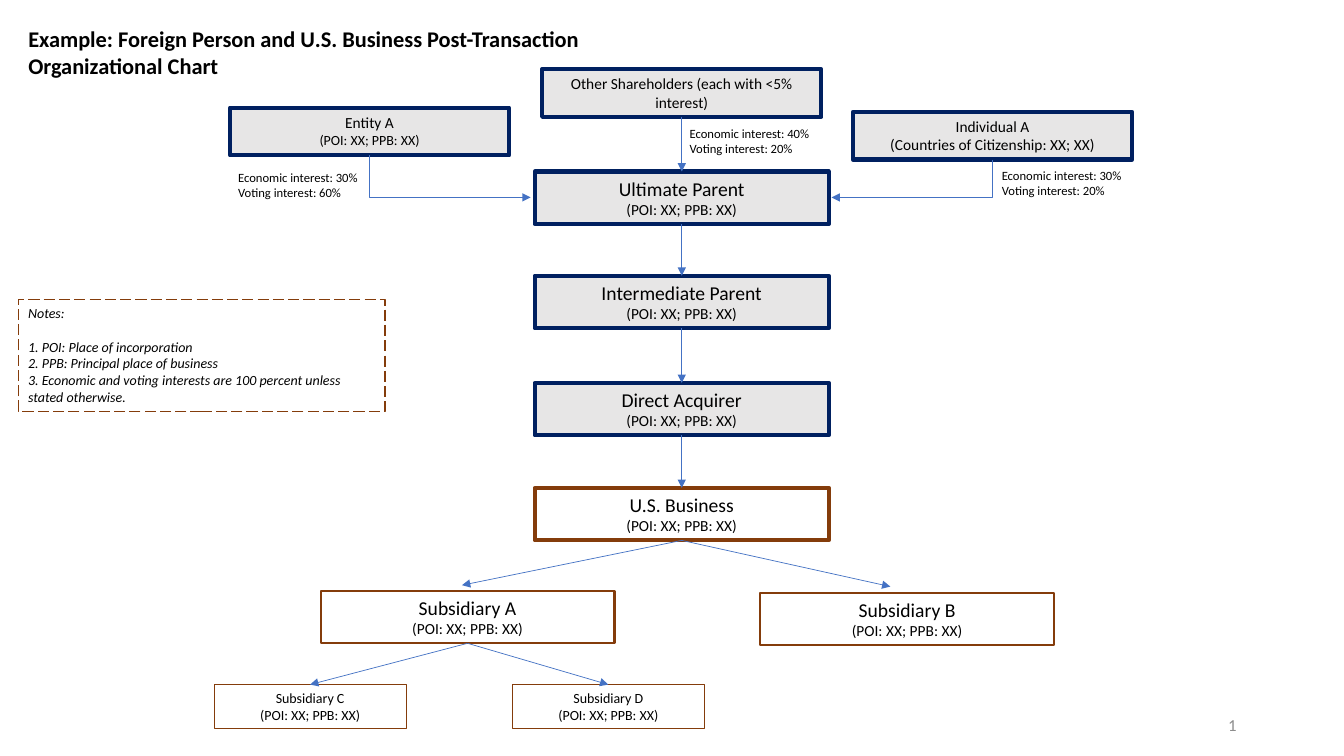
import dataclasses

import pptx
import pptx.dml.color
import pptx.enum.dml
import pptx.enum.shapes
import pptx.enum.text
import pptx.oxml
import pptx.oxml.ns
import pptx.util

Pt = pptx.util.Pt
ALIGN = pptx.enum.text.PP_ALIGN
ANCHOR = pptx.enum.text.MSO_ANCHOR
CONNECTOR = pptx.enum.shapes.MSO_CONNECTOR
qn = pptx.oxml.ns.qn
BOTTOM, TOP = 2, 0


@dataclasses.dataclass(frozen=True)
class Theme:
    font: str = "Calibri"
    text: str = "000000"
    muted: str = "8C8C8C"
    arrow: str = "4472C4"
    foreign_fill: str = "E7E6E6"
    foreign_line: str = "002060"
    domestic_fill: str = "FFFFFF"
    domestic_line: str = "843C0B"
    title: float = 16
    entity: float = 14
    number: float = 12
    detail: float = 11
    small: float = 10
    label: float = 9


def rgb(value):
    return pptx.dml.color.RGBColor.from_string(value)


def add_xml(parent, tag):
    element = parent.makeelement(qn(tag), {})
    parent.append(element)
    return element


class OrganizationChart:
    def __init__(self, slide, theme):
        self.slide = slide
        self.theme = theme

    def set_text(self, shape, lines, align=ALIGN.LEFT, anchor=ANCHOR.TOP, color=None):
        """Fill a shape with (text, size) lines, one paragraph each."""
        frame = shape.text_frame
        frame.word_wrap = True
        frame.auto_size = pptx.enum.text.MSO_AUTO_SIZE.NONE
        frame.vertical_anchor = anchor
        frame.margin_left = frame.margin_right = Pt(7.2)
        frame.margin_top = frame.margin_bottom = Pt(3.6)
        for index, (text, size) in enumerate(lines):
            paragraph = frame.paragraphs[0] if index == 0 else frame.add_paragraph()
            paragraph.text = text
            paragraph.alignment = align
            paragraph.font.name = self.theme.font
            paragraph.font.size = Pt(size)
            paragraph.font.color.rgb = rgb(color or self.theme.text)
        return frame.paragraphs

    def title(self, text, left, top, width, height):
        title = self.slide.shapes.title
        title.left, title.top, title.width, title.height = map(Pt, (left, top, width, height))
        self.set_text(title, [(text, self.theme.title)])[0].font.bold = True

    def box(self, left, top, width, height, line, weight, fill=None):
        shape = self.slide.shapes.add_shape(
            pptx.enum.shapes.MSO_SHAPE.RECTANGLE, *map(Pt, (left, top, width, height)))
        shape.shadow.inherit = False
        if fill:
            shape.fill.solid()
            shape.fill.fore_color.rgb = rgb(fill)
        else:
            shape.fill.background()
        shape.line.color.rgb = rgb(line)
        shape.line.width = Pt(weight)
        return shape

    def entity(self, center, top, size, lines, domestic=False, weight=3.0):
        """Draw an entity box centred on a given x position."""
        theme = self.theme
        width, height = size
        fill = theme.domestic_fill if domestic else theme.foreign_fill
        line = theme.domestic_line if domestic else theme.foreign_line
        shape = self.box(center - width / 2, top, width, height, line, weight, fill)
        self.set_text(shape, lines, ALIGN.CENTER)
        return shape

    def notes(self, left, top, width, height, heading, items):
        shape = self.box(left, top, width, height, self.theme.domestic_line, 1)
        shape.line.dash_style = pptx.enum.dml.MSO_LINE.LONG_DASH
        paragraphs = self.set_text(shape, [(text, self.theme.small) for text in [heading, *items]])
        for paragraph in paragraphs:
            paragraph.font.italic = True
        paragraphs[0].space_after = Pt(12)

    def interest(self, left, top, economic, voting):
        label = self.slide.shapes.add_textbox(*map(Pt, (left, top, 130, 29)))
        self.set_text(label, [(f"Economic interest: {economic}%", self.theme.label),
                              (f"Voting interest: {voting}%", self.theme.label)])

    def slide_number(self, left, top, width, height):
        box = self.slide.shapes.add_textbox(*map(Pt, (left, top, width, height)))
        self.set_text(box, [("1", self.theme.number)], ALIGN.RIGHT,
                      ANCHOR.MIDDLE, self.theme.muted)

    def style_arrow(self, connector):
        connector.line.color.rgb = rgb(self.theme.arrow)
        connector.line.width = Pt(0.5)
        properties = connector.element.spPr
        add_xml(properties.find(qn("a:ln")), "a:tailEnd").set("type", "triangle")
        add_xml(properties, "a:effectLst")

    def arrow(self, parent, child=None, end=(0, 0)):
        """Join a parent's bottom to a child's top, or to a free end point."""
        connector = self.slide.shapes.add_connector(
            CONNECTOR.STRAIGHT, Pt(0), Pt(0), *map(Pt, end))
        connector.begin_connect(parent, BOTTOM)
        if child is not None:
            connector.end_connect(child, TOP)
        self.style_arrow(connector)

    def corner_arrow(self, start, end):
        """Run down from start, then sideways to end."""
        (x1, y1), (x2, y2) = start, end
        drop, span = y2 - y1, abs(x2 - x1)
        left, top = (x1 + x2 - drop) / 2, (y1 + y2 - span) / 2
        connector = self.slide.shapes.add_connector(
            CONNECTOR.ELBOW, *map(Pt, (left, top, left + drop, top + span)))
        properties = connector.element.spPr
        properties.find(qn("a:prstGeom")).set("prst", "bentConnector2")
        transform = properties.find(qn("a:xfrm"))
        rightward = x2 > x1
        transform.set("rot", str((270 if rightward else 90) * 60000))
        if rightward:
            transform.set("flipH", "1")
        self.style_arrow(connector)


def main():
    presentation = pptx.Presentation()
    presentation.slide_width, presentation.slide_height = Pt(960), Pt(540)
    slide = presentation.slides.add_slide(presentation.slide_layouts[5])
    theme = Theme()
    chart = OrganizationChart(slide, theme)
    chart.title("Example: Foreign Person and U.S. Business Post-Transaction Organizational Chart",
                13, 14.5, 449, 46)

    place = "(POI: XX; PPB: XX)"
    main_size, owner_size, minor_size = (210, 37.5), (199.5, 34), (137.5, 31.5)
    axis = 487

    def lines(name, size=theme.entity, detail=theme.detail, text=place):
        return [(name, size), (text, detail)]

    others = chart.entity(axis, 49.5, owner_size,
                          [("Other Shareholders (each with <5% interest)", theme.detail)])
    chart.entity(264, 77, owner_size, lines("Entity A", theme.detail, theme.small))
    chart.entity(709, 80, owner_size,
                 lines("Individual A", theme.detail, text="(Countries of Citizenship: XX; XX)"))
    chain = [others]
    for name, top, domestic in [("Ultimate Parent", 122.5, False),
                                ("Intermediate Parent", 197, False),
                                ("Direct Acquirer", 273.5, False),
                                ("U.S. Business", 348.5, True)]:
        chain.append(chart.entity(axis, top, main_size, lines(name), domestic))
    for parent, child in zip(chain, chain[1:]):
        chart.arrow(parent, child)
    business = chain[-1]

    subsidiary_a = chart.entity(334, 422, main_size, lines("Subsidiary A"), True, 1.5)
    chart.entity(648, 423.5, main_size, lines("Subsidiary B"), True, 1.5)
    for end in [(330, 418), (636, 419)]:
        chart.arrow(business, end=end)
    for name, center in [("Subsidiary C", 221.5), ("Subsidiary D", 434.5)]:
        minor = chart.entity(center, 489, minor_size,
                             lines(name, theme.small, theme.small), True, 0.25)
        chart.arrow(subsidiary_a, minor)

    chart.corner_arrow((264, 111), (379, 141))
    chart.corner_arrow((709, 114), (594, 141))
    for left, top, economic, voting in [(163, 117.5, 30, 60), (485.5, 86.5, 40, 20),
                                        (708.5, 116.5, 30, 20)]:
        chart.interest(left, top, economic, voting)

    chart.notes(13, 214, 262, 80, "Notes:", [
        "1. POI: Place of incorporation",
        "2. PPB: Principal place of business",
        "3. Economic and voting interests are 100 percent unless stated otherwise."])
    chart.slide_number(674.5, 503.5, 216, 28.5)
    presentation.save("out.pptx")


if __name__ == "__main__":
    main()
